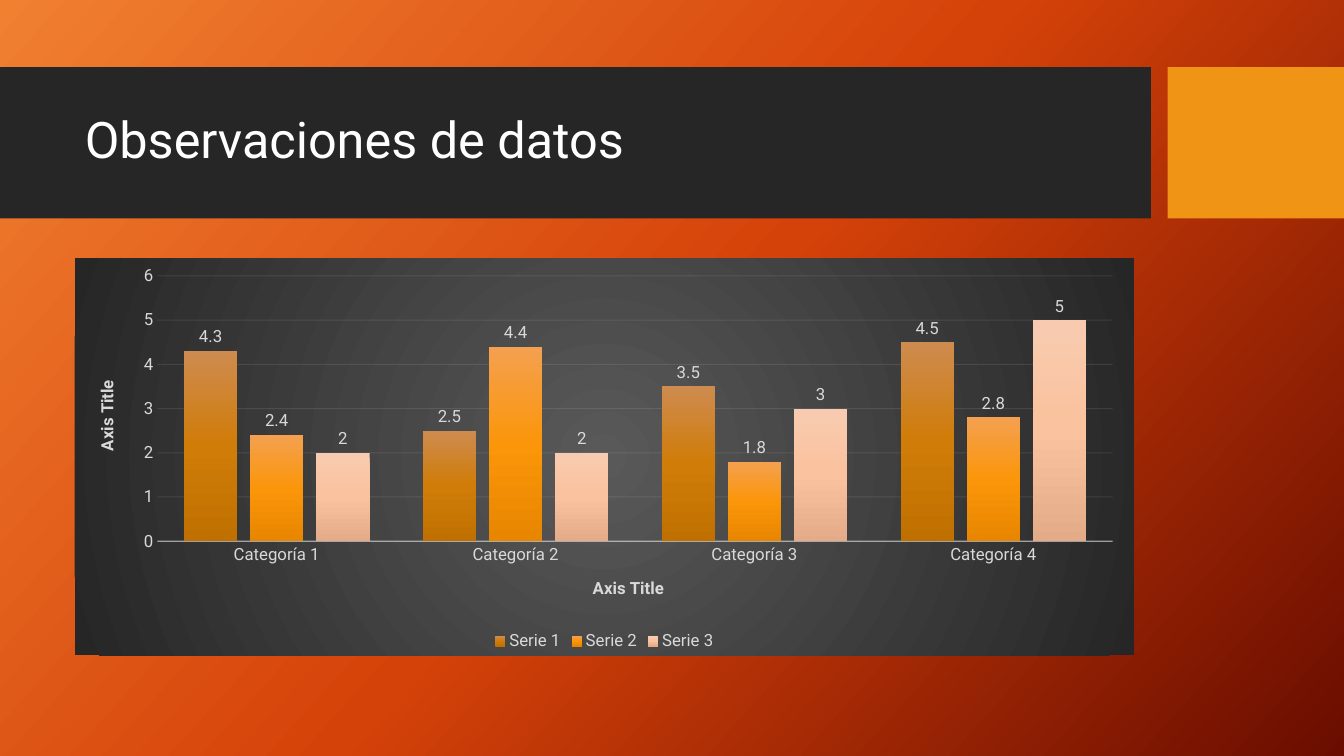
import pptx
import pptx.chart.data
import pptx.dml.color
import pptx.enum.chart
import pptx.enum.shapes
import pptx.enum.text
import pptx.oxml.ns
import pptx.util
from lxml import etree

COLS, ROWS = 160, 90
FONT = "Roboto"
LIGHT = "D9D9D9"
GRID = "F2F2F2"
CATEGORIES = [f"Categoría {n}" for n in range(1, 5)]
SERIES = [
    ("Serie 1", (4.3, 2.5, 3.5, 4.5), ("CE8B4F", "D07C08", "C07000")),
    ("Serie 2", (2.4, 4.4, 1.8, 2.8), ("F4A050", "FB960A", "E88600")),
    ("Serie 3", (2, 2, 3, 5), ("F8CBB0", "FAC29E", "E3AB87")),
]
qn = pptx.oxml.ns.qn


def rgb(value):
    return pptx.dml.color.RGBColor.from_string(value)


def apply(obj, **values):
    for name, value in values.items():
        setattr(obj, name, value)


def style(font, size, color=LIGHT, bold=False):
    apply(font, name=FONT, size=pptx.util.Pt(size), bold=bold)
    font.color.rgb = rgb(color)


def place(prs, col, row, cols, rows):
    w, h = prs.slide_width / COLS, prs.slide_height / ROWS
    return [round(v) for v in (col * w, row * h, cols * w, rows * h)]


def gradient(colors, angle=None):
    grad = etree.Element(qn("a:gradFill"), rotWithShape="1")
    stops = etree.SubElement(grad, qn("a:gsLst"))
    for i, color in enumerate(colors):
        pos = str(100000 * i // (len(colors) - 1))
        gs = etree.SubElement(stops, qn("a:gs"), pos=pos)
        etree.SubElement(gs, qn("a:srgbClr"), val=color)
    if angle is None:
        circle = etree.SubElement(grad, qn("a:path"), path="circle")
        sides = dict.fromkeys("ltrb", "50000")
        etree.SubElement(circle, qn("a:fillToRect"), **sides)
    else:
        etree.SubElement(grad, qn("a:lin"), ang=str(angle * 60000), scaled="0")
    return grad


def fill_gradient(fill, owner, colors, angle):
    fill.solid()
    solid = next(owner.iter(qn("a:solidFill")))
    solid.getparent().replace(solid, gradient(colors, angle))


def add_block(prs, s, box, color):
    sp = s.shapes.add_shape(pptx.enum.shapes.MSO_SHAPE.RECTANGLE, *place(prs, *box))
    sp.shadow.inherit = False
    sp.fill.solid()
    sp.fill.fore_color.rgb = rgb(color)
    sp.line.fill.background()


def set_title(prs, s, box, text):
    sp = s.shapes.title
    apply(sp, **dict(zip(("left", "top", "width", "height"), place(prs, *box))))
    tf = sp.text_frame
    apply(tf, text=text, word_wrap=True,
          vertical_anchor=pptx.enum.text.MSO_ANCHOR.MIDDLE,
          auto_size=pptx.enum.text.MSO_AUTO_SIZE.NONE)
    p = tf.paragraphs[0]
    apply(p, alignment=pptx.enum.text.PP_ALIGN.LEFT, line_spacing=0.9)
    style(p.runs[0].font, 36, "FFFFFF")


def format_line(line, holder, width, opacity):
    line.color.rgb = rgb(GRID)
    line.width = pptx.util.Pt(width)
    clr = next(holder.find(qn("c:spPr")).iter(qn("a:srgbClr")))
    etree.SubElement(clr, qn("a:alpha"), val=str(opacity * 1000))


def format_axis(axis, title):
    none = pptx.enum.chart.XL_TICK_MARK.NONE
    apply(axis, major_tick_mark=none, minor_tick_mark=none)
    style(axis.tick_labels.font, 12)
    tf = axis.axis_title.text_frame
    tf.text = title
    style(tf.paragraphs[0].runs[0].font, 12, bold=True)


def format_series(ser, colors):
    fill_gradient(ser.format.fill, ser._element, colors, 90)
    labels = ser.data_labels
    apply(labels, show_value=True,
          position=pptx.enum.chart.XL_LABEL_POSITION.OUTSIDE_END)
    style(labels.font, 12)


def add_column_chart(prs, s, box):
    data = pptx.chart.data.CategoryChartData()
    data.categories = CATEGORIES
    for name, values, _ in SERIES:
        data.add_series(name, values)
    kind = pptx.enum.chart.XL_CHART_TYPE.COLUMN_CLUSTERED
    chart = s.shapes.add_chart(kind, *place(prs, *box), data).chart
    apply(chart, has_title=False, has_legend=True)
    style(chart.font, 10, "FFFFFF")
    sp_pr = etree.Element(qn("c:spPr"))
    sp_pr.append(gradient(("595959", "262626")))
    ln = etree.SubElement(sp_pr, qn("a:ln"))
    etree.SubElement(ln, qn("a:noFill"))
    chart._chartSpace.find(qn("c:txPr")).addprevious(sp_pr)

    apply(chart.legend, include_in_layout=False,
          position=pptx.enum.chart.XL_LEGEND_POSITION.BOTTOM)
    style(chart.legend.font, 12)
    apply(chart.plots[0], gap_width=100, overlap=-24, vary_by_categories=False)
    for ser, (_, _, colors) in zip(chart.plots[0].series, SERIES):
        format_series(ser, colors)

    cat, val = chart.category_axis, chart.value_axis
    for axis in (cat, val):
        format_axis(axis, "Axis Title")
    format_line(cat.format.line, cat._element, 1, 54)
    val.format.line.fill.background()
    apply(val, minimum_scale=0, maximum_scale=6, major_unit=1, has_major_gridlines=True)
    format_line(val.major_gridlines.format.line,
                val._element.find(qn("c:majorGridlines")), 0.75, 10)


def main():
    prs = pptx.Presentation()
    apply(prs, slide_width=pptx.util.Inches(13.33), slide_height=pptx.util.Inches(7.5))
    s = prs.slides.add_slide(prs.slide_layouts[5])
    fill_gradient(s.background.fill, s._element, ("F18031", "D54209", "6A0D00"), 42)
    add_block(prs, s, (0, 8, 137, 18), "262626")
    add_block(prs, s, (139, 8, 21, 18), "F09415")
    title = s.shapes.title._element
    title.getparent().append(title)
    set_title(prs, s, (8.9, 9.84, 126.1, 14.16), "Observaciones de datos")
    add_column_chart(prs, s, (8.9, 30.72, 126.1, 47.28))
    prs.save("out.pptx")


if __name__ == "__main__":
    main()
